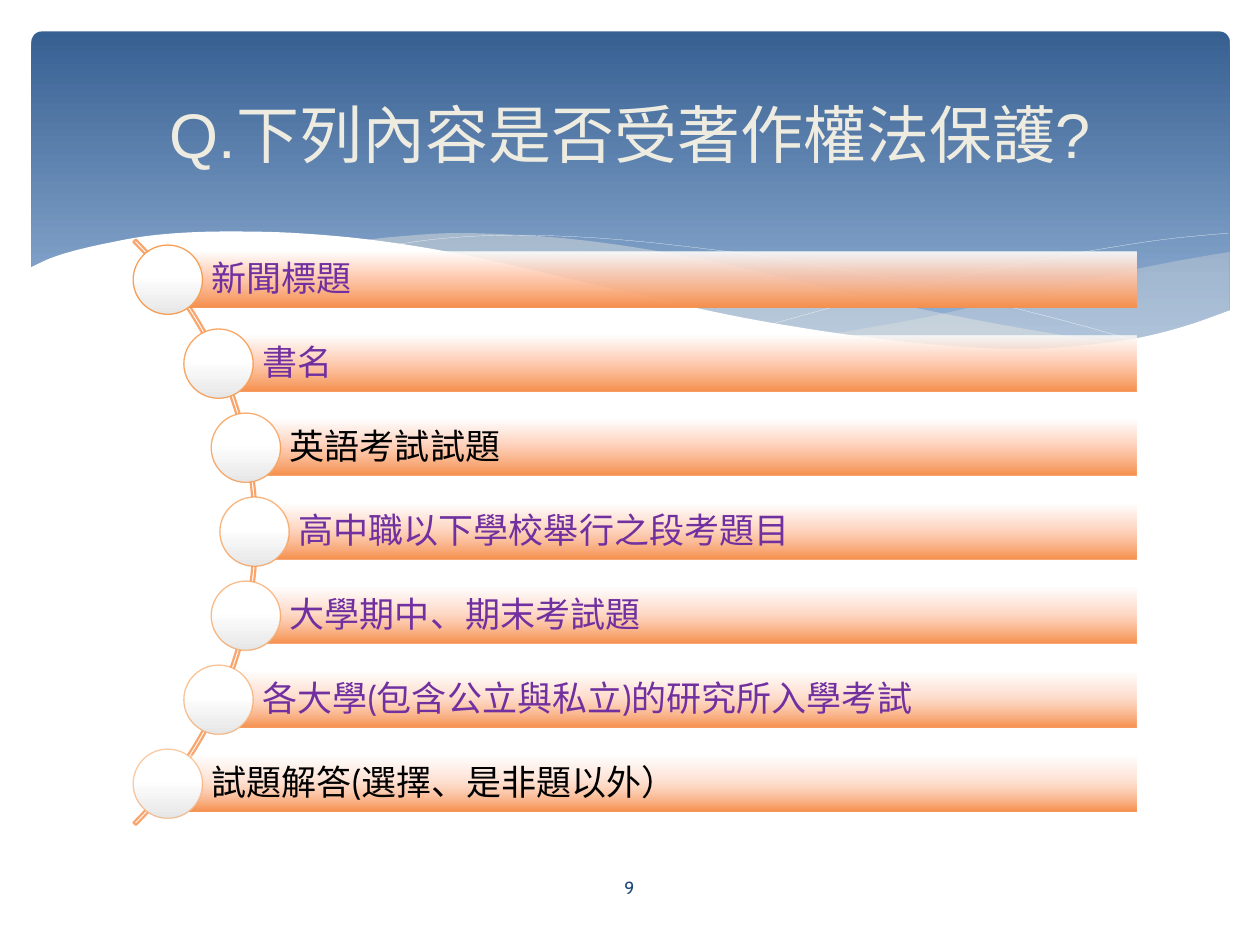
import math
from lxml import etree
from pptx import Presentation, util as u
from pptx.dml.color import RGBColor
from pptx.enum import shapes as es, text as et
from pptx.oxml.ns import qn

PX = u.Inches(0.01)
NAVY, SKY = RGBColor(0x37, 0x60, 0x92), RGBColor(0x95, 0xB3, 0xD7)
INK, CREAM = RGBColor(0x1F, 0x49, 0x7D), RGBColor(0xEE, 0xEC, 0xE1)
WHITE, BLACK = RGBColor(255, 255, 255), RGBColor(0, 0, 0)
GREY, PURPLE = RGBColor(0xE6, 0xE6, 0xE6), RGBColor(0x70, 0x30, 0xA0)
PEACH, CORAL = RGBColor(0xFF, 0xC7, 0xAC), RGBColor(0xF6, 0x8F, 0x4C)
ORANGE, SALMON = RGBColor(0xF7, 0x96, 0x46), RGBColor(0xF8, 0xA5, 0x6E)

TITLE = "Q.下列內容是否受著作權法保護?"
ITEMS = [
    ("新聞標題", PURPLE),
    ("書名", PURPLE),
    ("英語考試試題", BLACK),
    ("高中職以下學校舉行之段考題目", PURPLE),
    ("大學期中、期末考試題", PURPLE),
    ("各大學(包含公立與私立)的研究所入學考試", PURPLE),
    ("試題解答(選擇、是非題以外）", BLACK),
]
WAVES = [
    dict(fill=CREAM, alpha=29, curves=[
        [(976, 200), (935, 207), (891, 216), (832, 230), (779, 242), (729, 253), (661, 265)],
        [(661, 265), (705, 271), (745, 275), (781, 277), (824, 277), (863, 275),
         (897, 270), (928, 263), (949, 257), (976, 247)]]),
    dict(fill=CREAM, alpha=40, curves=[
        [(893, 273), (837, 265), (775, 254), (706, 240), (629, 222), (569, 208),
         (514, 198), (465, 191), (420, 187), (361, 185), (313, 188), (286, 191)],
        [(286, 191), (342, 199), (404, 211), (449, 222), (530, 240), (601, 255),
         (665, 266), (722, 274), (773, 277), (818, 278), (857, 277), (893, 273)]]),
    dict(line=WHITE, curves=[
        [(309, 195), (344, 190), (387, 187), (433, 187), (489, 190), (556, 197),
         (636, 208), (727, 226), (831, 251), (907, 272)]]),
    dict(line=WHITE, curves=[
        [(613, 257), (672, 241), (748, 223), (806, 210), (866, 199), (924, 190), (975, 185)]]),
    dict(fill=WHITE, curves=[
        [(977, 246), (940, 259), (899, 269), (850, 275), (809, 277), (761, 275),
         (708, 270), (648, 262), (579, 250), (503, 233), (447, 220), (391, 207),
         (340, 197), (292, 190), (250, 186), (211, 184), (161, 184), (119, 187),
         (85, 193), (59, 199), (40, 205), (23, 213)],
        [(23, 329), (977, 329)]]),
]


def smooth(pts, n=6):
    if len(pts) < 3:
        return pts
    ends = [pts[0], *pts, pts[-1]]
    out = [pts[0]]
    for a, b, c, d in zip(ends, ends[1:], ends[2:], ends[3:]):
        for k in range(1, n + 1):
            t = k / n
            out.append(tuple(
                (2 * q + (r - p) * t + (2 * p - 5 * q + 4 * r - s) * t ** 2
                 + (3 * q - p - 3 * r + s) * t ** 3) / 2
                for p, q, r, s in zip(a, b, c, d)))
    return out


def fade(node, alpha):
    if alpha < 100:
        etree.SubElement(node, qn("a:alpha"), val=str(alpha * 1000))


def paint(shape, fill=None, line=None, width=0.1, alpha=100):
    shape.shadow.inherit = False
    if isinstance(fill, list):
        shape.fill.gradient()
        shape.fill.gradient_angle = 270
        stops = shape._element.spPr.find(qn("a:gradFill")).find(qn("a:gsLst"))
        for stop in list(stops):
            stops.remove(stop)
        for at, color, clear in fill:
            stop = etree.SubElement(stops, qn("a:gs"), pos=str(at * 1000))
            fade(etree.SubElement(stop, qn("a:srgbClr"), val=str(color)), clear)
    elif fill is None:
        shape.fill.background()
    else:
        shape.fill.solid()
        shape.fill.fore_color.rgb = fill
        fade(shape._element.spPr.find(qn("a:solidFill"))[0], alpha)
    if line is None:
        shape.line.fill.background()
    else:
        shape.line.color.rgb = line
        shape.line.width = u.Pt(width)
        fade(next(shape.line._ln.iter(qn("a:srgbClr"))), alpha)


def write(shape, words, size, color, face="Cabin", align="CENTER", pad=(10, 5, 10, 5)):
    frame = shape.text_frame
    frame.text = words
    sides = dict(zip(("left", "top", "right", "bottom"), pad))
    form = {f"margin_{k}": v * PX for k, v in sides.items()}
    form |= dict(word_wrap=True, auto_size=et.MSO_AUTO_SIZE.NONE,
                 vertical_anchor=et.MSO_ANCHOR.MIDDLE)
    for key, val in form.items():
        setattr(frame, key, val)
    para = frame.paragraphs[0]
    para.alignment = et.PP_ALIGN[align]
    for key, val in dict(name=face, size=u.Pt(size)).items():
        setattr(para.runs[0].font, key, val)
    para.runs[0].font.color.rgb = color
    return para


def main():
    deck = Presentation()
    deck.slide_width, deck.slide_height = 1000 * PX, 750 * PX
    slide = deck.slides.add_slide(deck.slide_layouts[5])
    tree = slide.shapes

    def add(kind, *box):
        return tree.add_shape(es.MSO_SHAPE[kind], *(round(v * PX) for v in box))

    head = add("ROUNDED_RECTANGLE", 25, 25, 951, 270)
    head.adjustments[0] = 0.03
    paint(head, [(0, NAVY, 100), (90, SKY, 100)])

    for wave in WAVES:
        form = dict(wave)
        pts = [(x * PX, y * PX) for curve in form.pop("curves") for x, y in smooth(curve)]
        pen = tree.build_freeform(*pts[0])
        pen.add_line_segments(pts[1:], close="fill" in form)
        paint(pen.convert_to_shape(), **form)

    arc = add("BLOCK_ARC", -453, 94, 657, 657)
    for k, val in enumerate((189, 27, 0.004)):
        arc.adjustments[k] = val
    paint(arc, line=SALMON, width=1.25)

    mid, step, reach, hub = 422, 66.67, 325, -123
    right, tall, ball = 902, 44, 55
    for i, (words, color) in enumerate(ITEMS):
        drop = (i - 3) * step
        x, y = hub + math.sqrt(reach ** 2 - drop ** 2), mid + drop
        clear = round(90 - i * 40 / 6)
        bar = add("RECTANGLE", x, y - tall / 2, right - x, tall)
        paint(bar, [(0, WHITE, clear), (44, PEACH, clear), (100, CORAL, 100)])
        para = write(bar, words, 20, color, align="LEFT", pad=(35, 6, 6, 6))
        para.line_spacing = 0.9
        dot = add("OVAL", x - ball / 2, y - ball / 2, ball, ball)
        paint(dot, [(0, WHITE, 100), (44, WHITE, 100), (100, GREY, 100)],
              ORANGE, 0.75, clear)

    title = tree.title
    for key, val in dict(left=50, top=37, width=900, height=137).items():
        setattr(title, key, val * PX)
    write(title, TITLE, 36, CREAM, "Arial")
    tree._spTree.append(title._element)

    page = tree.add_textbox(*(v * PX for v in (436, 684, 127, 40)))
    write(page, "9", 10, INK)
    deck.save("out.pptx")


if __name__ == "__main__":
    main()
